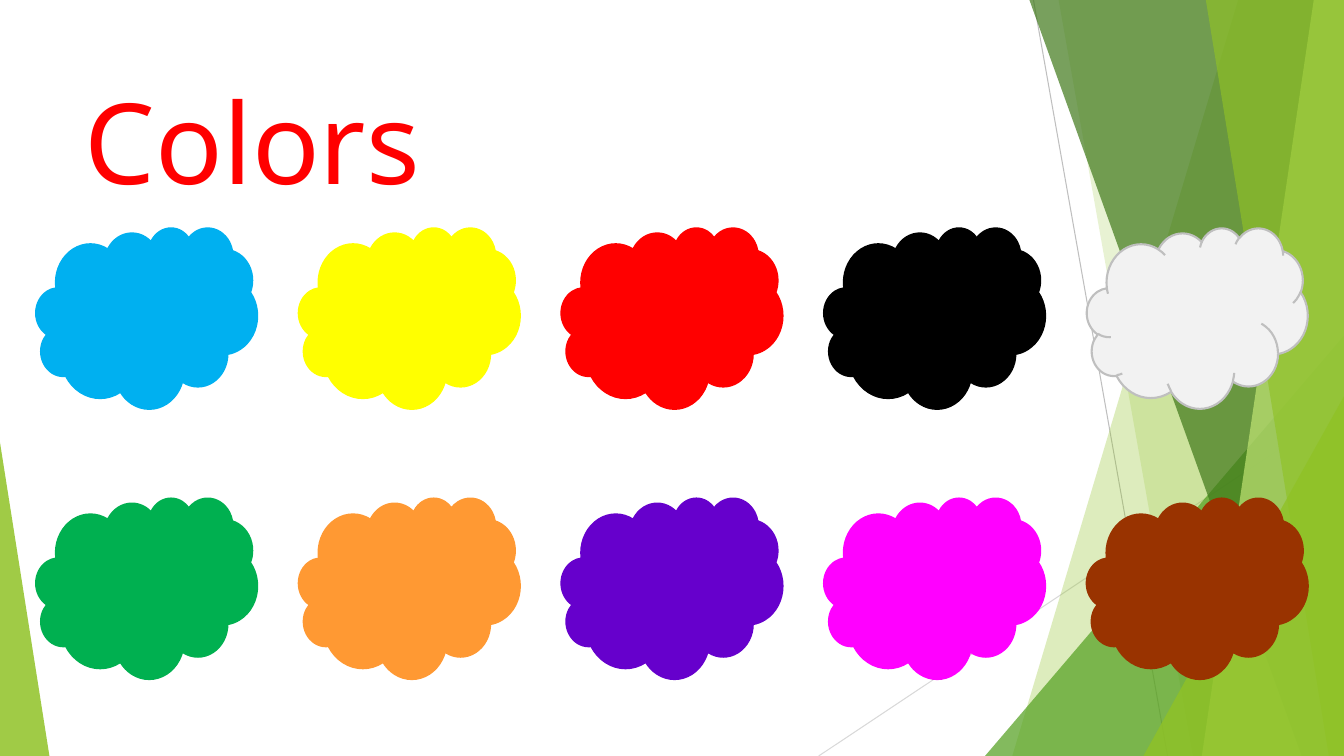
from lxml.etree import SubElement
from pptx import Presentation
from pptx.dml.color import RGBColor
from pptx.enum.shapes import MSO_CONNECTOR, MSO_SHAPE
from pptx.enum.text import MSO_ANCHOR, PP_ALIGN
from pptx.oxml.ns import qn
from pptx.util import Inches, Pt

WIDTH, HEIGHT = 13.33, 7.5
COLORS = {
    "blue": "00B0F0", "yellow": "FFFF00", "red": "FF0000", "black": "000000",
    "white": "F2F2F2", "green": "00B050", "orange": "FF9933",
    "purple": "6600CC", "pink": "FF00FF", "brown": "993300",
    "gray": "BFBFBF", "pale gray": "D9D9D9", "lime": "90C226",
    "leaf": "54A021", "forest": "3F7819", "light lime": "C0E474",
}
CLOUD_ROWS = [
    ["blue", "yellow", "red", "black", "white"],
    ["green", "orange", "purple", "pink", "brown"],
]
CLOUD_LEFT, CLOUD_TOP = 0.36, 2.26
COLUMN_STEP, ROW_STEP = 2.605, 2.68
CLOUD_WIDTH, CLOUD_HEIGHT = 2.19, 1.79


def rgb(name):
    return RGBColor.from_string(COLORS[name])


def paint(shape, color, opacity=100, outline=None):
    """Fill a shape, with an opacity in percent and an optional outline."""
    shape.shadow.inherit = False
    shape.fill.solid()
    shape.fill.fore_color.rgb = rgb(color)
    if opacity < 100:
        tint = shape.fill._xPr.find(qn("a:solidFill"))[0]
        SubElement(tint, qn("a:alpha")).set("val", str(opacity * 1000))
    if outline:
        shape.line.color.rgb = rgb(outline)
        shape.line.width = Pt(1.5)
    else:
        shape.line.fill.background()


def add_ray(slide, start, end, color):
    ray = slide.shapes.add_connector(
        MSO_CONNECTOR.STRAIGHT, *map(Inches, start + end))
    ray.line.color.rgb = rgb(color)
    ray.line.width = Pt(0.75)
    SubElement(ray._element.spPr, qn("a:effectLst"))


def add_facet(slide, top_x, bottom_x, color, opacity):
    """Add a full-height band from a slanted edge to the right slide edge."""
    corners = [(top_x, 0), (WIDTH, 0), (WIDTH, HEIGHT), (bottom_x, HEIGHT)]
    start, *others = [(Inches(x), Inches(y)) for x, y in corners]
    outline = slide.shapes.build_freeform(*start)
    outline.add_line_segments(others, close=True)
    paint(outline.convert_to_shape(), color, opacity)


def add_wedge(slide, left, top, width, apex, color, opacity):
    """Add a triangle that stands on the bottom edge of the slide."""
    wedge = slide.shapes.add_shape(
        MSO_SHAPE.ISOSCELES_TRIANGLE, Inches(left), Inches(top),
        Inches(width), Inches(HEIGHT - top))
    wedge.adjustments[0] = apex
    paint(wedge, color, opacity)


def add_backdrop(slide):
    add_ray(slide, (10.25, 0), (11.58, HEIGHT), "gray")
    add_ray(slide, (WIDTH, 4.03), (8.12, HEIGHT), "pale gray")
    add_facet(slide, 12.28, 10.04, "lime", 30)
    add_facet(slide, 10.5, 11.83, "lime", 20)
    add_wedge(slide, 9.77, 3.33, 3.56, 1, "leaf", 72)
    add_facet(slide, 10.21, 12.91, "forest", 70)
    add_facet(slide, 13.03, 11.92, "light lime", 70)
    add_facet(slide, 11.96, 13.18, "lime", 65)
    add_wedge(slide, 11.34, 3.93, 1.99, 1, "lime", 80)
    add_wedge(slide, 0, 4.39, 0.49, 0, "lime", 85)


def add_title(slide, words):
    title = slide.shapes.title
    title.left, title.top = Inches(0.74), Inches(0.67)
    title.width, title.height = Inches(9.4), Inches(1.44)
    title.text_frame.vertical_anchor = MSO_ANCHOR.MIDDLE
    paragraph = title.text_frame.paragraphs[0]
    paragraph.alignment = PP_ALIGN.LEFT
    run = paragraph.add_run()
    run.text = words
    run.font.name = "Noto Sans"
    run.font.size = Pt(80)
    run.font.color.rgb = rgb("red")
    # Bring the title in front of the backdrop
    slide.shapes._spTree.append(title._element)


def add_cloud(slide, row, column, color):
    cloud = slide.shapes.add_shape(
        MSO_SHAPE.CLOUD,
        Inches(CLOUD_LEFT + column * COLUMN_STEP),
        Inches(CLOUD_TOP + row * ROW_STEP),
        Inches(CLOUD_WIDTH), Inches(CLOUD_HEIGHT))
    paint(cloud, color, outline="gray" if color == "white" else color)


def main():
    deck = Presentation()
    deck.slide_width, deck.slide_height = Inches(WIDTH), Inches(HEIGHT)
    slide = deck.slides.add_slide(deck.slide_layouts.get_by_name("Title Only"))
    add_backdrop(slide)
    add_title(slide, "Colors")
    for row, colors in enumerate(CLOUD_ROWS):
        for column, color in enumerate(colors):
            add_cloud(slide, row, column, color)
    deck.save("out.pptx")


if __name__ == "__main__":
    main()
